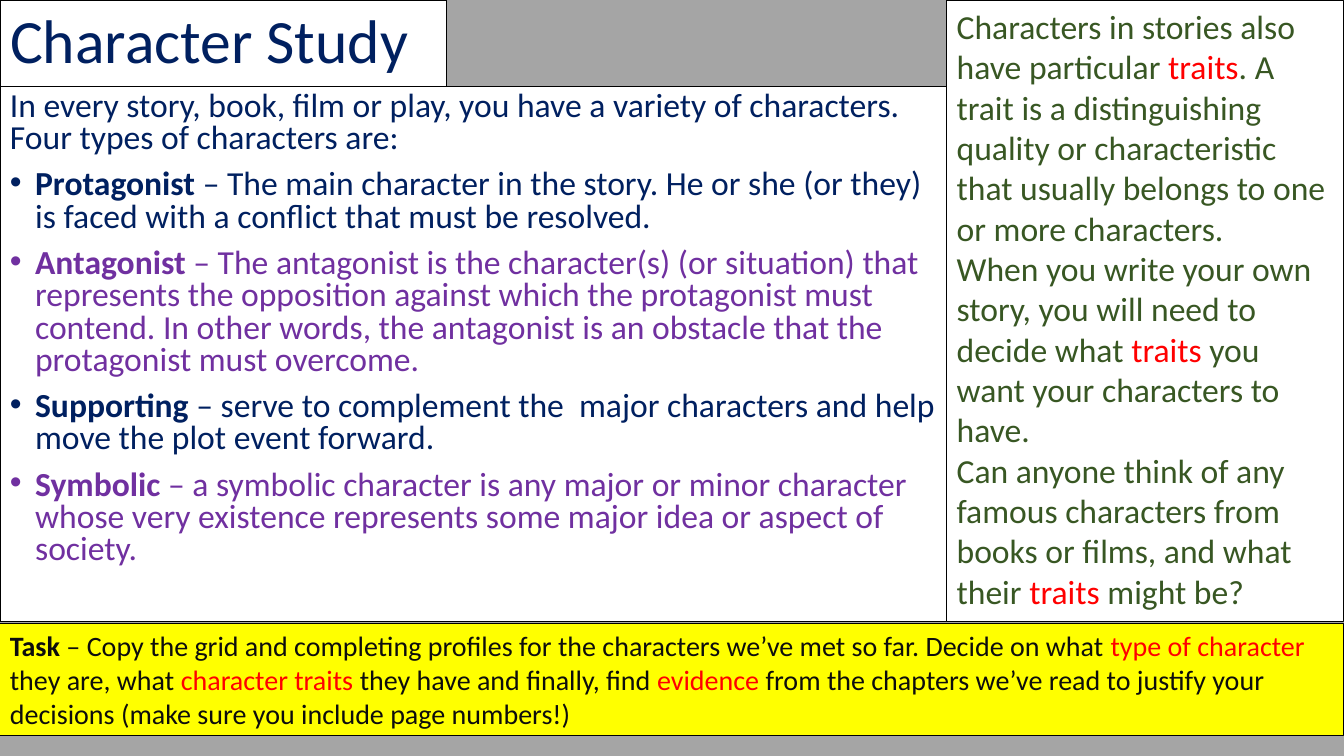
from pptx import Presentation
from pptx.dml.color import RGBColor
from pptx.enum.text import MSO_ANCHOR, MSO_AUTO_SIZE, PP_ALIGN
from pptx.oxml import parse_xml
from pptx.oxml.ns import nsdecls
from pptx.util import Emu, Pt

PX = 9144  # 100 px to the inch
NAVY, PURPLE, GREEN = "002060", "7030A0", "385723"
RED, INK, WHITE, YELLOW = "FF0000", "0D0D0D", "FFFFFF", "FFFF00"

TYPES = [
    ("Protagonist", " – The main character in the story. He or she (or they) "
     "is faced with a conflict that must be resolved."),
    ("Antagonist", " – The antagonist is the character(s) (or situation) that "
     "represents the opposition against which the protagonist must contend. "
     "In other words, the antagonist is an obstacle that the protagonist must overcome."),
    ("Supporting", " – serve to complement the  major characters and help "
     "move the plot event forward."),
    ("Symbolic", " – a symbolic character is any major or minor character "
     "whose very existence represents some major idea or aspect of society."),
]
# Every second part between bars is a red key term
TRAITS = [
    "Characters in stories also have particular |traits|. A trait is a "
    "distinguishing quality or characteristic that usually belongs to one or more characters.",
    "When you write your own story, you will need to decide what |traits| you "
    "want your characters to have.",
    "Can anyone think of any famous characters from books or films, and what "
    "their |traits| might be?",
]
TASK = (" – Copy the grid and completing profiles for the characters we’ve met so far. "
        "Decide on what |type of character |they are, what |character traits |they have "
        "and finally, find |evidence| from the chapters we’ve read to justify your "
        "decisions (make sure you include page numbers!)")


def color(code):
    return RGBColor.from_string(code)


def place(shape, box, fill):
    """Set the box, fill and thin black outline; return the text frame."""
    shape.left, shape.top, shape.width, shape.height = (Emu(n * PX) for n in box)
    shape.fill.solid()
    shape.fill.fore_color.rgb = color(fill)
    shape.line.color.rgb = color("000000")
    shape.line.width = Pt(0.75)
    frame = shape.text_frame
    frame.word_wrap = True
    frame.auto_size = MSO_AUTO_SIZE.NONE
    return frame


def panel(slide, box, fill):
    return place(slide.shapes.add_textbox(0, 0, 0, 0), box, fill)


def write(para, parts, size):
    """Fill a paragraph with (text, colour, bold) parts."""
    for text, code, bold in parts:
        run = para.add_run()
        run.text = text
        font = run.font
        font.name, font.size, font.bold = "Calibri", Pt(size), bold
        font.color.rgb = color(code)


def lines(frame, count):
    """Yield the frame's first paragraph, then new ones."""
    yield frame.paragraphs[0]
    for _ in range(count - 1):
        yield frame.add_paragraph()


def terms(text, code):
    return [(part, RED if i % 2 else code, False)
            for i, part in enumerate(text.split("|"))]


def bullet(para):
    props = para._p.get_or_add_pPr()
    props.set("marL", str(25 * PX))
    props.set("indent", str(-25 * PX))
    for tag in ('<a:buFont %s typeface="Arial"/>', '<a:buChar %s char="•"/>'):
        props.append(parse_xml(tag % nsdecls("a")))


def title(slide, box):
    frame = place(slide.shapes.title, box, WHITE)
    frame.vertical_anchor = MSO_ANCHOR.MIDDLE
    para = frame.paragraphs[0]
    para.alignment = PP_ALIGN.LEFT
    para.line_spacing = 0.9
    write(para, [("Character Study", NAVY, False)], 44)


def types(slide, box):
    intro = ("In every story, book, film or play, you have a variety of characters. "
             "Four types of characters are:")
    rows = [[(intro, NAVY, False)]]
    for i, (name, text) in enumerate(TYPES):
        code = PURPLE if i % 2 else NAVY
        rows.append([(name, code, True), (text, code, False)])
    frame = panel(slide, box, WHITE)
    for para, row in zip(lines(frame, len(rows)), rows):
        para.line_spacing = 0.8
        para.space_before = Pt(10)
        if len(row) > 1:
            bullet(para)
        write(para, row, 24)


def traits(slide, box):
    frame = panel(slide, box, WHITE)
    for para, text in zip(lines(frame, len(TRAITS)), TRAITS):
        write(para, terms(text, GREEN), 24)


def task(slide, box):
    frame = panel(slide, box, YELLOW)
    write(frame.paragraphs[0], [("Task", INK, True)] + terms(TASK, INK), 20)


def main():
    deck = Presentation()
    wide, high = 1333, 750
    deck.slide_width, deck.slide_height = Emu(wide * PX), Emu(high * PX)
    slide = deck.slides.add_slide(deck.slide_layouts[5])
    slide.background.fill.solid()
    slide.background.fill.fore_color.rgb = color("A5A5A5")

    # Left column, right column, bottom strip
    split, head, foot = 939, 86, 617
    title(slide, (0, 0, 443, head))
    types(slide, (0, head, split, foot - head))
    traits(slide, (split, 1, wide - split, foot - 1))
    task(slide, (0, foot + 2, wide, 111))
    deck.save("out.pptx")


if __name__ == "__main__":
    main()
